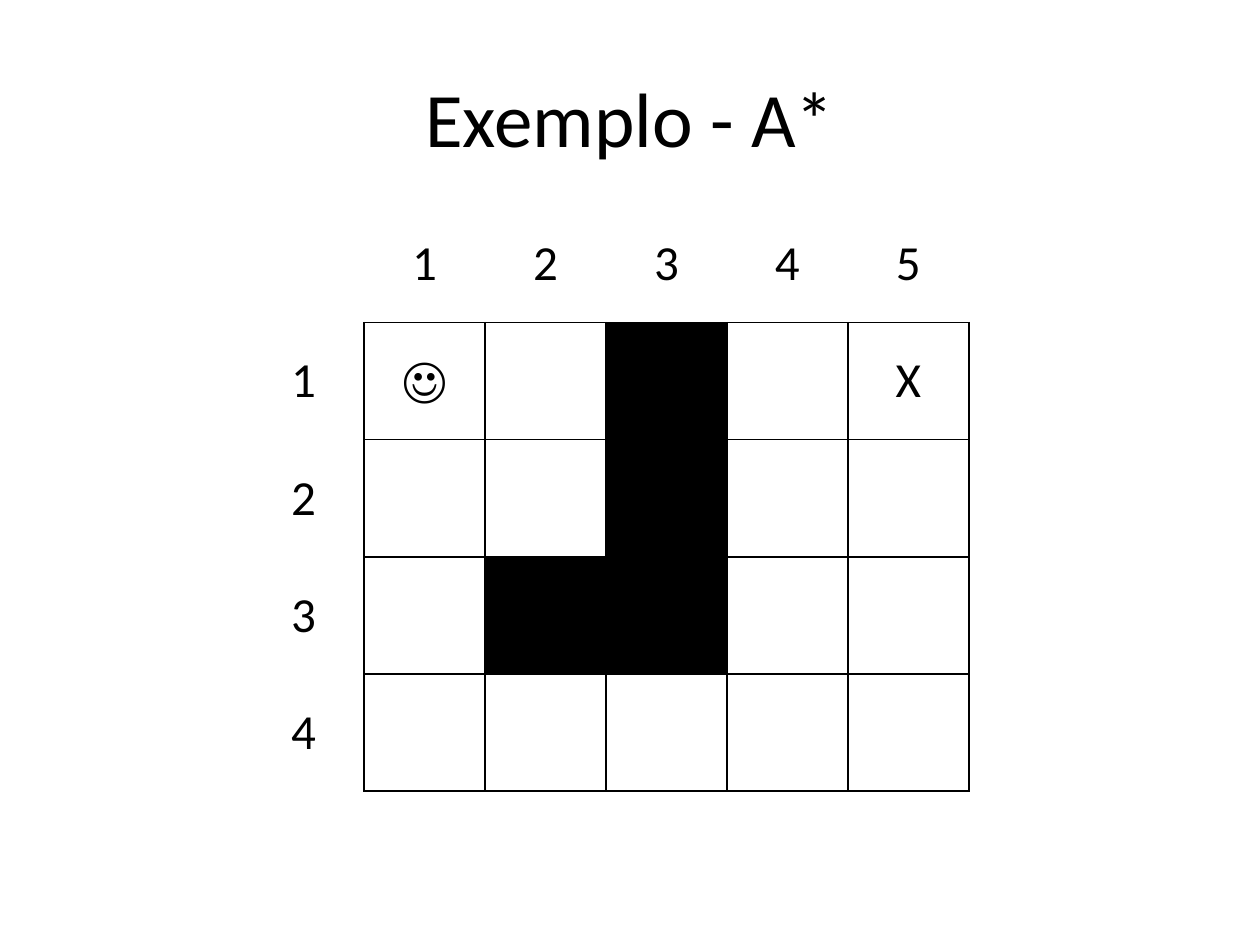
"""Build the A* example slide: a numbered grid with walls, a start and a goal."""
from dataclasses import dataclass

import pptx
import pptx.dml.color
import pptx.enum.text
import pptx.oxml
import pptx.oxml.ns
import pptx.util
from pptx.util import Inches


@dataclass(frozen=True)
class Theme:
    font: str = "Calibri"
    ink: str = "000000"
    title_size: int = 44
    cell_size: int = 28
    border_width: int = 1


@dataclass(frozen=True)
class Maze:
    rows: int
    cols: int
    walls: frozenset[tuple[int, int]]
    marks: dict[tuple[int, int], str]

    def label(self, row: int, col: int) -> str:
        if row == 0 or col == 0:
            return str(row or col or "")
        return self.marks.get((row, col), "")

    def edges(self, row: int, col: int) -> str:
        if row and col:
            return "LRTB"
        return "R" if row else "B" if col else ""


THEME = Theme()
MAZE = Maze(
    rows=4,
    cols=5,
    walls=frozenset({(1, 3), (2, 3), (3, 2), (3, 3)}),
    marks={(1, 1): "☺", (1, 5): "X"},
)
CELL_WIDTH, CELL_HEIGHT = 0.96, 0.93


def write(tf, text: str, size: int) -> None:
    p = tf.paragraphs[0]
    p.alignment = pptx.enum.text.PP_ALIGN.CENTER
    r = p.add_run()
    r.text = text
    r.font.name = THEME.font
    r.font.size = pptx.util.Pt(size)
    r.font.color.rgb = pptx.dml.color.RGBColor.from_string(THEME.ink)


def set_borders(cell, edges: str) -> None:
    tcPr = cell._tc.get_or_add_tcPr()
    width = pptx.util.Pt(THEME.border_width)
    solid = f'<a:solidFill><a:srgbClr val="{THEME.ink}"/></a:solidFill>'
    for side in "LRTB":
        fill = solid if side in edges else "<a:noFill/>"
        tcPr.append(pptx.oxml.parse_xml(
            f'<a:ln{side} {pptx.oxml.ns.nsdecls("a")} w="{width}">{fill}</a:ln{side}>'
        ))


def format_cell(cell, text: str, edges: str, wall: bool) -> None:
    set_borders(cell, edges)
    if wall:
        cell.fill.solid()
        cell.fill.fore_color.rgb = pptx.dml.color.RGBColor.from_string(THEME.ink)
    else:
        cell.fill.background()
    cell.vertical_anchor = pptx.enum.text.MSO_ANCHOR.MIDDLE
    cell.margin_left = cell.margin_right = Inches(0.21)
    cell.margin_top = cell.margin_bottom = Inches(0.11)
    if text:
        write(cell.text_frame, text, THEME.cell_size)


def add_maze(s, maze: Maze, left: float, top: float) -> None:
    rows, cols = maze.rows + 1, maze.cols + 1
    table = s.shapes.add_table(
        rows, cols, Inches(left), Inches(top),
        Inches(cols * CELL_WIDTH), Inches(rows * CELL_HEIGHT),
    ).table
    table.first_row = table.horz_banding = False
    for row in range(rows):
        for col in range(cols):
            format_cell(
                table.cell(row, col), maze.label(row, col),
                maze.edges(row, col), (row, col) in maze.walls,
            )


def add_title(s, text: str) -> None:
    sp = s.shapes.title
    sp.left, sp.top = Inches(0.5), Inches(0.3)
    sp.width, sp.height = Inches(9), Inches(1.25)
    sp.text_frame.vertical_anchor = pptx.enum.text.MSO_ANCHOR.MIDDLE
    write(sp.text_frame, text, THEME.title_size)


def main() -> None:
    prs = pptx.Presentation()
    prs.slide_width, prs.slide_height = Inches(10), Inches(7.5)
    s = prs.slides.add_slide(prs.slide_layouts[5])
    add_title(s, "Exemplo - A*")
    add_maze(s, MAZE, left=1.93, top=1.63)
    prs.save("out.pptx")


if __name__ == "__main__":
    main()
